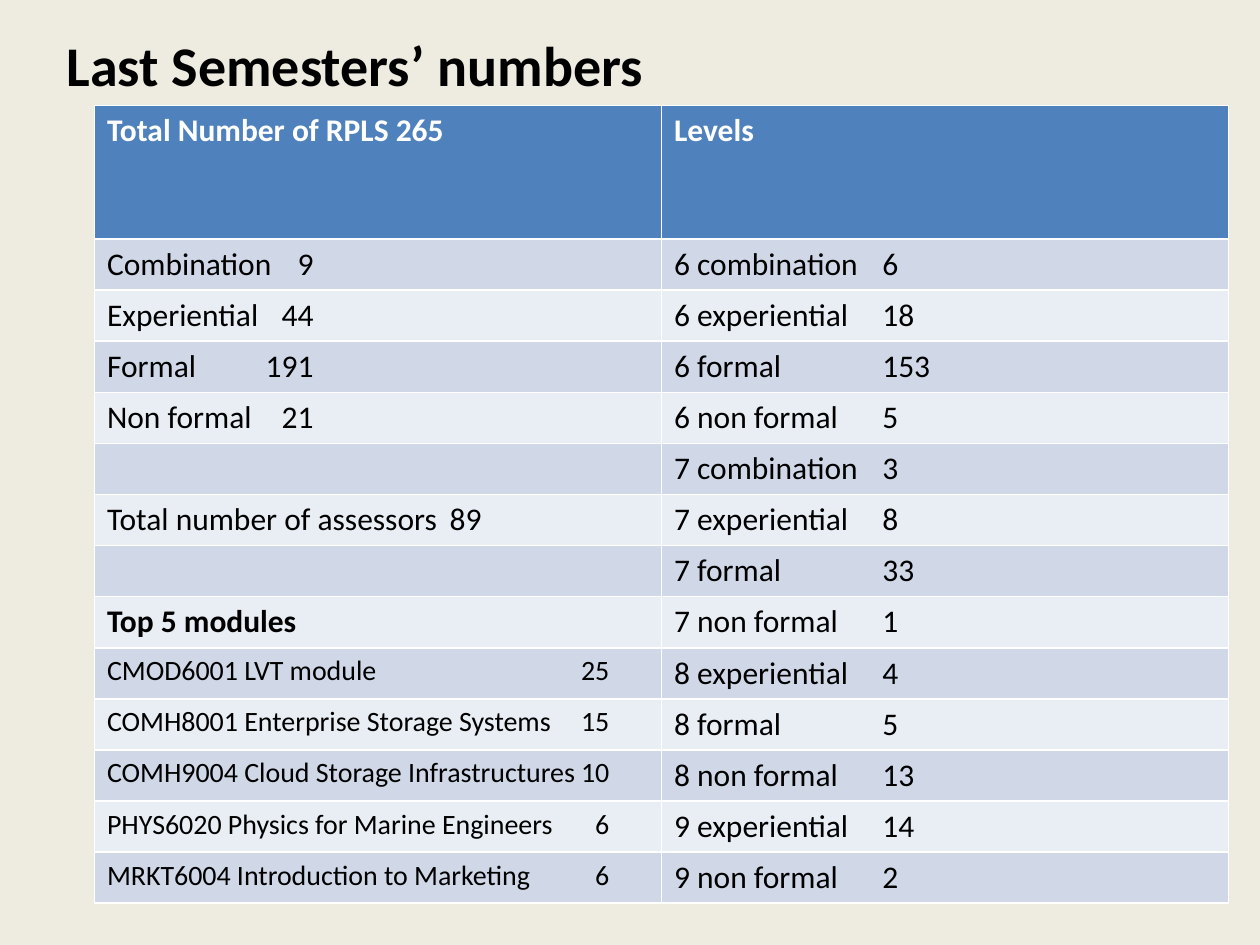
from dataclasses import dataclass
from typing import Optional

from lxml.etree import SubElement
from pptx import Presentation
from pptx.dml.color import RGBColor as Color
from pptx.enum.text import MSO_ANCHOR as Anchor
from pptx.oxml.ns import qn
from pptx.util import Pt


@dataclass(frozen=True)
class Theme:
    font: str = "Calibri"
    title_size: float = 32
    body_size: float = 18
    module_size: float = 16
    background: str = "EEECE1"
    header: str = "4F81BD"
    bands: tuple[str, str] = ("D0D8E8", "E9EDF4")
    dark: str = "000000"
    light: str = "FFFFFF"


@dataclass(frozen=True)
class Entry:
    label: str = ""
    count: Optional[int] = None
    tab: float = 0
    align: str = "l"
    size: float = Theme.body_size
    bold: bool = False


def category(label: str, count: int) -> Entry:
    return Entry(label, count, tab=118, align="r")


def module(label: str, count: int) -> Entry:
    return Entry(label, count, tab=287, align="r", size=Theme.module_size)


def level(label: str, count: int) -> Entry:
    return Entry(label, count, tab=119)


THEME = Theme()
HEADINGS = ("Total Number of RPLS 265", "Levels")
HEADER_HEIGHT = 76.3
ROW_HEIGHT = 29.2
COLUMN_WIDTH = 324

SUMMARY = [
    category("Combination", 9),
    category("Experiential", 44),
    category("Formal", 191),
    category("Non formal", 21),
    Entry(),
    Entry("Total number of assessors", 89, tab=214, align="r"),
    Entry(),
    Entry("Top 5 modules", bold=True),
    module("CMOD6001 LVT module", 25),
    module("COMH8001 Enterprise Storage Systems", 15),
    module("COMH9004 Cloud Storage Infrastructures", 10),
    module("PHYS6020 Physics for Marine Engineers", 6),
    module("MRKT6004 Introduction to Marketing", 6),
]
LEVELS = [
    level("6 combination", 6),
    level("6 experiential", 18),
    level("6 formal", 153),
    level("6 non formal", 5),
    level("7 combination", 3),
    level("7 experiential", 8),
    level("7 formal", 33),
    level("7 non formal", 1),
    level("8 experiential", 4),
    level("8 formal", 5),
    level("8 non formal", 13),
    level("9 experiential", 14),
    level("9 non formal", 2),
]


def write(frame, text: str, *, size: float, color: str = THEME.dark,
          bold: bool = False, tab: float = 0, align: str = "l") -> None:
    para = frame.paragraphs[0]
    if tab:
        stops = SubElement(para._p.get_or_add_pPr(), qn("a:tabLst"))
        SubElement(stops, qn("a:tab"), pos=str(Pt(tab)), algn=align)
    span = para.add_run()
    span.text = text
    span.font.name = THEME.font
    span.font.size = Pt(size)
    span.font.bold = bold
    span.font.color.rgb = Color.from_string(color)


def paint(fill, color: str) -> None:
    fill.solid()
    fill.fore_color.rgb = Color.from_string(color)


def add_title(page, text: str) -> None:
    box = page.shapes.add_textbox(Pt(31), Pt(0), Pt(648), Pt(73))
    box.text_frame.word_wrap = True
    box.text_frame.vertical_anchor = Anchor.MIDDLE
    write(box.text_frame, text, size=THEME.title_size, bold=True)


def fill_entry(cell, entry: Entry, band: str) -> None:
    paint(cell.fill, band)
    if entry.label:
        text = entry.label if entry.count is None else f"{entry.label}\t{entry.count}"
        write(cell.text_frame, text, size=entry.size, bold=entry.bold,
              tab=entry.tab, align=entry.align)


def add_numbers_table(page) -> None:
    count = len(LEVELS)
    table = page.shapes.add_table(
        count + 1, len(HEADINGS), Pt(54), Pt(60.3),
        Pt(COLUMN_WIDTH * len(HEADINGS)), Pt(HEADER_HEIGHT + ROW_HEIGHT * count),
    ).table
    for row in table.rows:
        row.height = Pt(ROW_HEIGHT)
    table.rows[0].height = Pt(HEADER_HEIGHT)

    for column, heading in enumerate(HEADINGS):
        cell = table.cell(0, column)
        paint(cell.fill, THEME.header)
        write(cell.text_frame, heading, size=THEME.body_size,
              color=THEME.light, bold=True)

    for index, entries in enumerate(zip(SUMMARY, LEVELS)):
        for column, entry in enumerate(entries):
            fill_entry(table.cell(index + 1, column), entry, THEME.bands[index % 2])


def main() -> None:
    deck = Presentation()
    deck.slide_width, deck.slide_height = Pt(720), Pt(540)
    page = deck.slides.add_slide(deck.slide_layouts[6])
    paint(page.background.fill, THEME.background)
    add_title(page, "Last Semesters’ numbers")
    add_numbers_table(page)
    deck.save("out.pptx")


if __name__ == "__main__":
    main()
